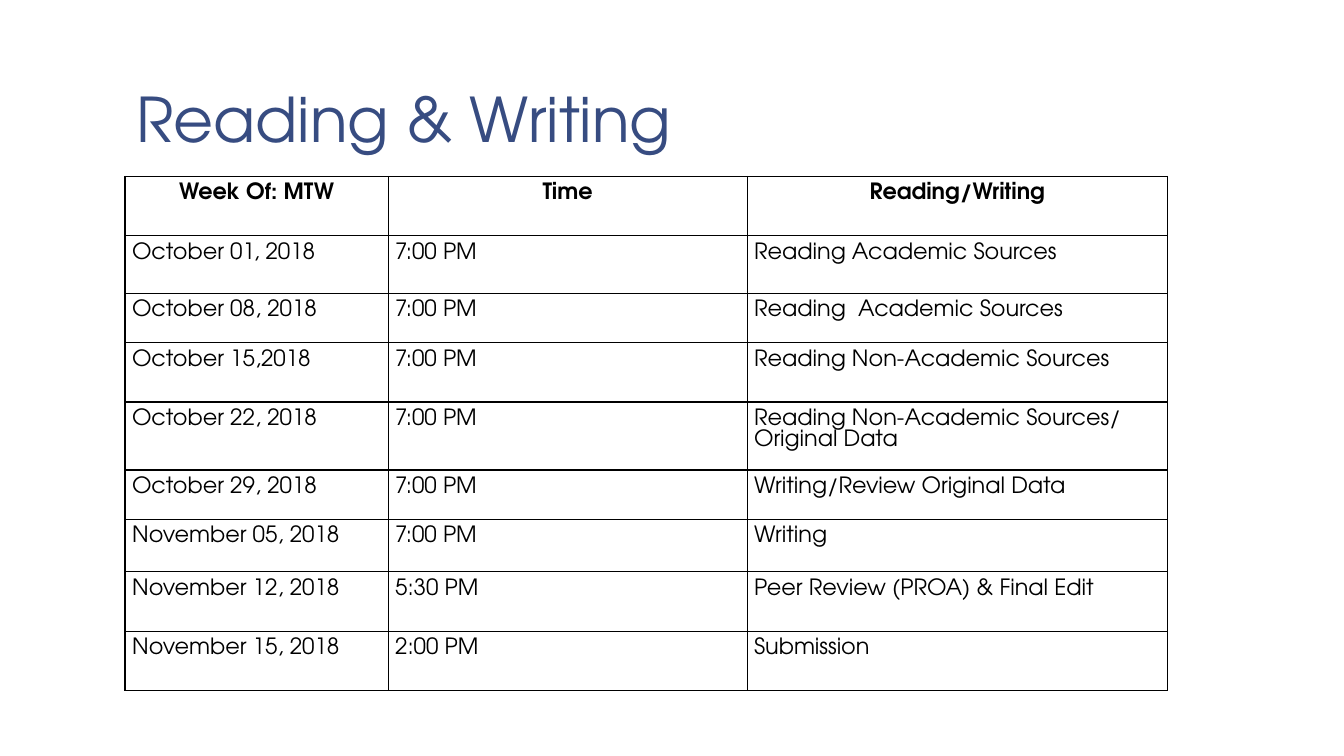
from pptx import Presentation
from pptx.dml.color import RGBColor
from pptx.enum.text import MSO_ANCHOR, PP_ALIGN
from pptx.oxml import parse_xml
from pptx.oxml.ns import nsdecls
from pptx.util import Inches, Pt

FONT = "TeX Gyre Adventor"
NAVY = RGBColor(0x37, 0x4C, 0x81)
BLACK = RGBColor(0x00, 0x00, 0x00)
WHITE = RGBColor(0xFF, 0xFF, 0xFF)

COLS = [2.61, 3.56, 4.17]
HEIGHTS = [0.59, 0.57, 0.49, 0.59, 0.59, 0.49, 0.52, 0.59, 0.59]
ROWS = [
    ("Week Of: MTW", "Time", "Reading/Writing"),
    ("October 01, 2018", "7:00 PM", "Reading Academic Sources"),
    ("October 08, 2018", "7:00 PM", "Reading  Academic Sources"),
    ("October 15,2018", "7:00 PM", "Reading Non-Academic Sources"),
    ("October 22, 2018", "7:00 PM", "Reading Non-Academic Sources/ Original Data"),
    ("October 29, 2018", "7:00 PM", "Writing/Review Original Data"),
    ("November 05, 2018", "7:00 PM", "Writing"),
    ("November 12, 2018", "5:30 PM", "Peer Review (PROA) & Final Edit"),
    ("November 15, 2018", "2:00 PM", "Submission"),
]


def write(p, text, color, **fmt):
    r = p.add_run()
    r.text = text
    r.font.color.rgb = color
    for name, value in {"name": FONT, **fmt}.items():
        setattr(r.font, name, value)


prs = Presentation()
prs.slide_width, prs.slide_height = Inches(13.33), Inches(7.5)
s = prs.slides.add_slide(prs.slide_layouts[6])
s.background.fill.solid()
s.background.fill.fore_color.rgb = WHITE

title = s.shapes.add_textbox(Inches(1.22), Inches(0.08), Inches(11.11), Inches(1.53))
tf = title.text_frame
frame = {
    "word_wrap": True,
    "vertical_anchor": MSO_ANCHOR.BOTTOM,
    "margin_left": Inches(0.13),
    "margin_right": Inches(0.13),
    "margin_top": Inches(0.07),
    "margin_bottom": Inches(0.07),
}
for name, value in frame.items():
    setattr(tf, name, value)
p = tf.paragraphs[0]
p.line_spacing = 0.85
write(p, "Reading & Writing", NAVY, size=Pt(44))

table = s.shapes.add_table(
    len(ROWS), len(COLS), Inches(1.24), Inches(1.75),
    Inches(sum(COLS)), Inches(sum(HEIGHTS)),
).table
table.first_row = table.horz_banding = False
for col, width in zip(table.columns, COLS):
    col.width = Inches(width)

for i, (row, height, texts) in enumerate(zip(table.rows, HEIGHTS, ROWS)):
    row.height = Inches(height)
    for cell, text in zip(row.cells, texts):
        for side in ("left", "right", "top", "bottom"):
            setattr(cell, f"margin_{side}", Inches(0.07))
        cell.fill.background()
        tcPr = cell._tc.get_or_add_tcPr()
        for k, edge in enumerate(("lnL", "lnR", "lnT", "lnB")):
            tcPr.insert(k, parse_xml(
                f'<a:{edge} {nsdecls("a")} w="{Pt(1)}"><a:solidFill>'
                f'<a:srgbClr val="{BLACK}"/></a:solidFill></a:{edge}>'
            ))
        p = cell.text_frame.paragraphs[0]
        p.alignment = PP_ALIGN.CENTER if i == 0 else PP_ALIGN.LEFT
        write(p, text, BLACK, size=Pt(16), bold=i == 0)

prs.save("out.pptx")
